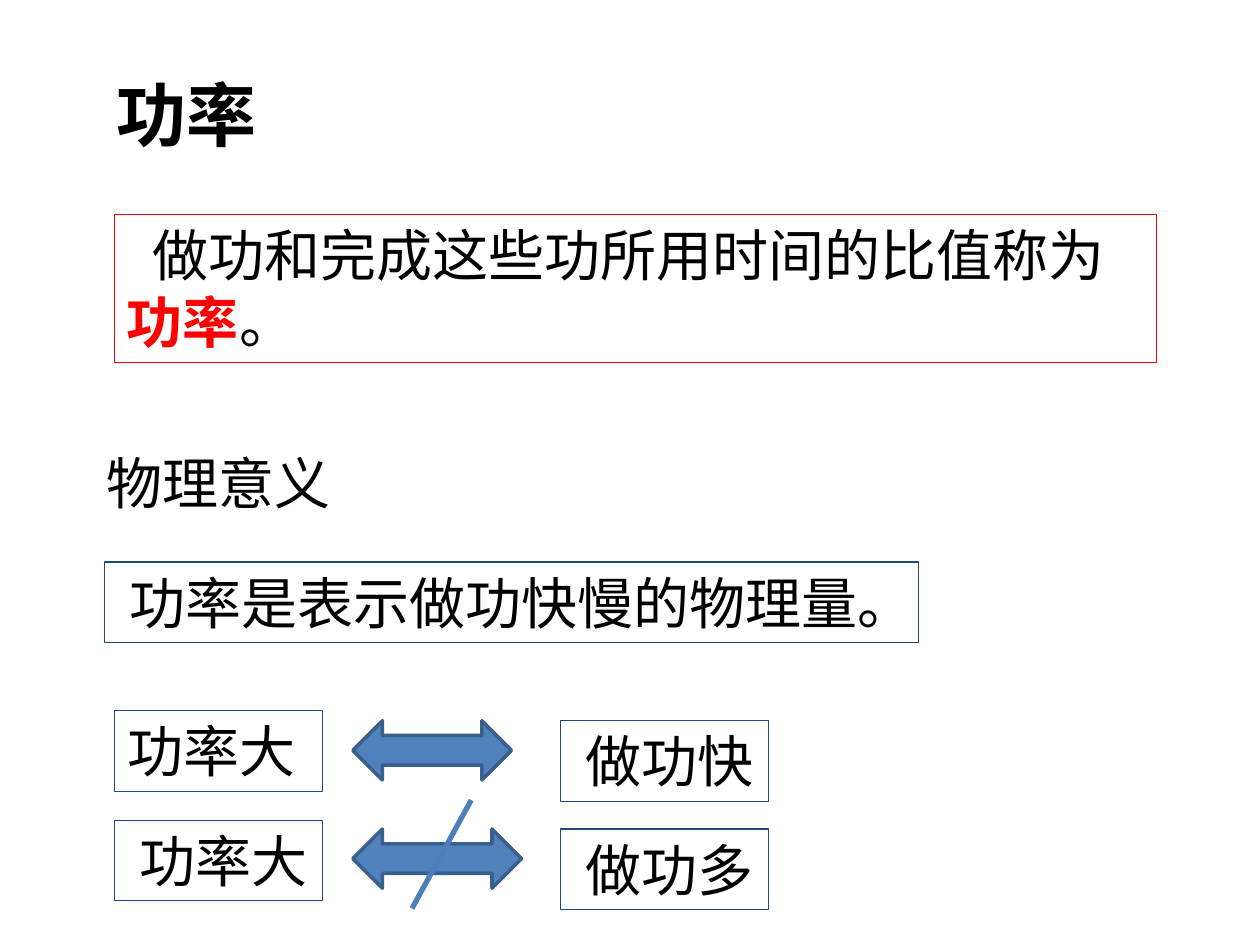
from pptx import Presentation
from pptx.dml.color import RGBColor
from pptx.enum.shapes import MSO_CONNECTOR, MSO_SHAPE
from pptx.enum.text import MSO_ANCHOR, MSO_AUTO_SIZE, PP_ALIGN
from pptx.oxml.ns import qn
from pptx.util import Inches, Pt
from lxml.etree import SubElement

THEME = {
    "text": "000000", "key": "FF0000", "frame": "1F497D",
    "arrow": "4F81BD", "arrow_edge": "3A5F8C", "slash": "4B7EBC",
    "body_font": "Calibri", "title_font": "Noto Sans CJK SC",
    "body_size": 32, "title_size": 40,
}

# Headings: text, box, font, size, bold
HEADINGS = [
    ("功率", (0.83, 0.52, 1.32, 0.77), "title_font", "title_size", True),
    ("物理意义", (0.75, 3.51, 2, 0.64), "body_font", "body_size", False),
]

# Framed statements: runs of (text, is key term), box, first-line indent, frame
STATEMENTS = [
    ([("做功和完成这些功所用时间的比值称为", False), ("功率", True), ("。", False)],
     (0.91, 1.7, 8.27, 1.18), 0.2, "key"),
    ([("功率是表示做功快慢的物理量。", False)],
     (0.83, 4.46, 6.46, 0.64), 0.1, "frame"),
]

# Comparisons: left text, left top, left indent, right text, right top, arrow width
COMPARISONS = [
    ("功率大", 5.64, 0, "做功快", 5.72, 1.26),
    ("功率大", 6.51, 0.1, "做功多", 6.58, 1.34),
]
LEFT_X, ARROW_X, RIGHT_X = 0.91, 2.8, 4.45
LABEL_W, LABEL_H, ARROW_H = 1.65, 0.64, 0.47
SLASH = (3.74, 6.35, 3.27, 7.21)


def color(name):
    return RGBColor.from_string(THEME[name])


def inches(values):
    return [Inches(v) for v in values]


def set_font(p, font="body_font", size="body_size"):
    p.font.name = THEME[font]
    p.font.size = Pt(THEME[size])
    p.font.color.rgb = color("text")


def add_heading(slide, text, box, font, size, bold):
    tf = slide.shapes.add_textbox(*inches(box)).text_frame
    tf.word_wrap = False
    tf.auto_size = MSO_AUTO_SIZE.SHAPE_TO_FIT_TEXT
    p = tf.paragraphs[0]
    p.add_run().text = text
    set_font(p, font, size)
    p.font.bold = bold


def add_outlined(slide, kind, box, line, width):
    sp = slide.shapes.add_shape(kind, *inches(box))
    sp.shadow.inherit = False
    sp.line.color.rgb = color(line)
    sp.line.width = Pt(width)
    return sp


def add_framed(slide, runs, box, indent, frame="frame"):
    sp = add_outlined(slide, MSO_SHAPE.RECTANGLE, box, frame, 0.75)
    sp.fill.background()
    tf = sp.text_frame
    tf.word_wrap = True
    tf.auto_size = MSO_AUTO_SIZE.SHAPE_TO_FIT_TEXT
    tf.vertical_anchor = MSO_ANCHOR.TOP
    p = tf.paragraphs[0]
    p.alignment = PP_ALIGN.LEFT
    p._p.get_or_add_pPr().set("indent", str(Inches(indent)))
    set_font(p)
    for text, is_key in runs:
        r = p.add_run()
        r.text = text
        if is_key:
            r.font.bold = True
            r.font.color.rgb = color("key")


def add_arrow(slide, top, width):
    sp = add_outlined(slide, MSO_SHAPE.LEFT_RIGHT_ARROW,
                      (ARROW_X, top, width, ARROW_H), "arrow_edge", 2)
    sp.fill.solid()
    sp.fill.fore_color.rgb = color("arrow")


def add_slash(slide):
    line = slide.shapes.add_connector(MSO_CONNECTOR.STRAIGHT, *inches(SLASH))
    line.line.color.rgb = color("slash")
    line.line.width = Pt(3)
    SubElement(line._element.spPr, qn("a:effectLst"))


def main():
    prs = Presentation()
    prs.slide_width, prs.slide_height = Inches(10), Inches(7.5)
    slide = prs.slides.add_slide(prs.slide_layouts[6])
    for heading in HEADINGS:
        add_heading(slide, *heading)
    for statement in STATEMENTS:
        add_framed(slide, *statement)
    for left, left_y, indent, right, right_y, arrow_w in COMPARISONS:
        add_framed(slide, [(left, False)], (LEFT_X, left_y, LABEL_W, LABEL_H), indent)
        add_arrow(slide, right_y, arrow_w)
        add_framed(slide, [(right, False)], (RIGHT_X, right_y, LABEL_W, LABEL_H), 0.1)
    add_slash(slide)
    prs.save("out.pptx")


if __name__ == "__main__":
    main()
